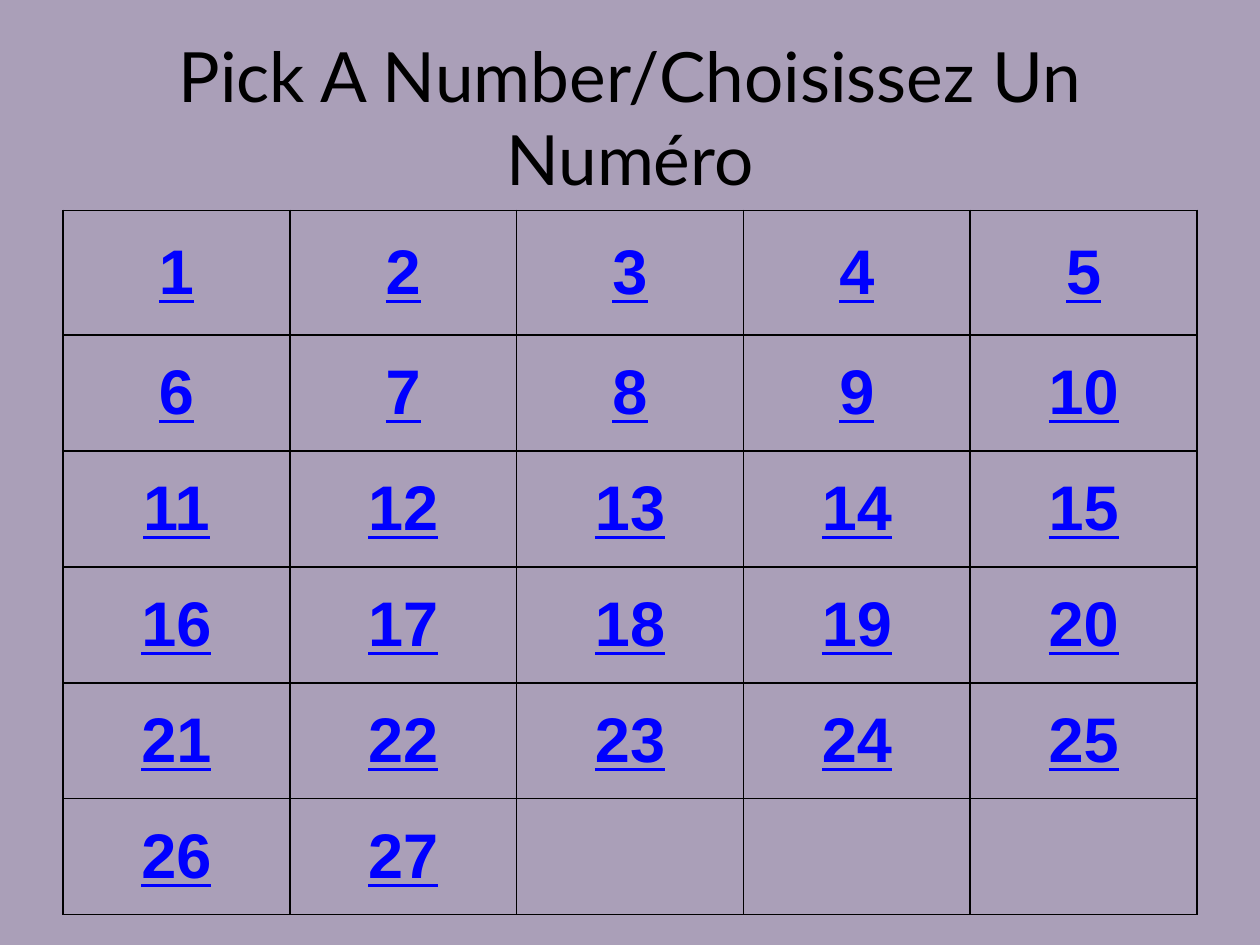
from dataclasses import dataclass

from lxml import etree
from pptx import Presentation
from pptx.dml.color import RGBColor
from pptx.enum import text
from pptx.oxml import ns
from pptx.util import Inches, Pt

MAUVE = RGBColor(0xAA, 0x9F, 0xB8)
BLACK = RGBColor(0, 0, 0)
BLUE = RGBColor(0, 0, 255)
COLS = 5
LAST = 27
WIDTH = 1.8
ROWS = [0.99] + [0.92] * 5


@dataclass(frozen=True)
class Style:
    font: str
    size: float
    color: RGBColor
    bold: bool = False
    under: bool = False


HEAD = Style("Lato", 39.6, BLACK)
NUMBER = Style("Arial", 36, BLUE, True, True)


def write(frame, words: str, style: Style) -> None:
    para = frame.paragraphs[0]
    para.alignment = text.PP_ALIGN.CENTER
    run = para.add_run()
    run.text = words
    font = run.font
    font.name = style.font
    font.size = Pt(style.size)
    font.bold = style.bold
    font.underline = style.under
    font.color.rgb = style.color


def border(cell) -> None:
    props = cell._tc.get_or_add_tcPr()
    for side in ("lnL", "lnR", "lnT", "lnB"):
        line = etree.SubElement(props, ns.qn(f"a:{side}"), w=str(Pt(1)))
        fill = etree.SubElement(line, ns.qn("a:solidFill"))
        etree.SubElement(fill, ns.qn("a:srgbClr"), val=str(BLACK))


def title(slide) -> None:
    head = slide.shapes.title
    head.left, head.top = Inches(0.5), Inches(0.3)
    head.width, head.height = Inches(9), Inches(1.25)
    frame = head.text_frame
    frame.word_wrap = True
    frame.auto_size = text.MSO_AUTO_SIZE.NONE
    frame.vertical_anchor = text.MSO_ANCHOR.MIDDLE
    write(frame, "Pick A Number/Choisissez Un Numéro", HEAD)


def board(slide) -> None:
    grid = slide.shapes.add_table(
        len(ROWS), COLS, Inches(0.5), Inches(1.67),
        Inches(WIDTH * COLS), Inches(sum(ROWS))).table
    grid.first_row = False
    grid.horz_banding = False
    for col in grid.columns:
        col.width = Inches(WIDTH)
    for row, height in zip(grid.rows, ROWS):
        row.height = Inches(height)
    for number, cell in enumerate(grid.iter_cells(), 1):
        border(cell)
        cell.fill.background()
        cell.vertical_anchor = text.MSO_ANCHOR.MIDDLE
        cell.margin_left = cell.margin_right = Inches(0.09)
        cell.margin_top = cell.margin_bottom = Inches(0.05)
        if number <= LAST:
            write(cell.text_frame, str(number), NUMBER)


def main() -> None:
    deck = Presentation()
    deck.slide_width, deck.slide_height = Inches(10), Inches(7.5)
    slide = deck.slides.add_slide(deck.slide_layouts[5])
    back = slide.background.fill
    back.solid()
    back.fore_color.rgb = MAUVE
    title(slide)
    board(slide)
    deck.save("out.pptx")


if __name__ == "__main__":
    main()
